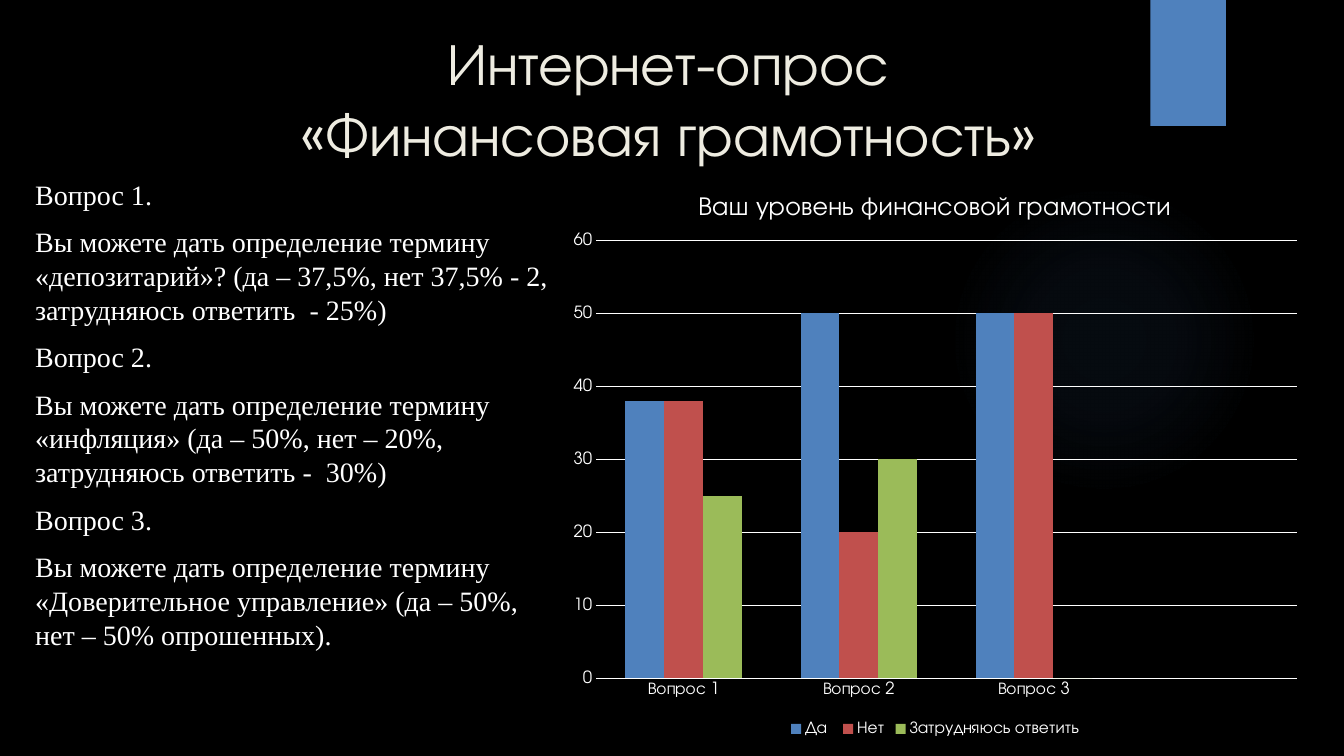
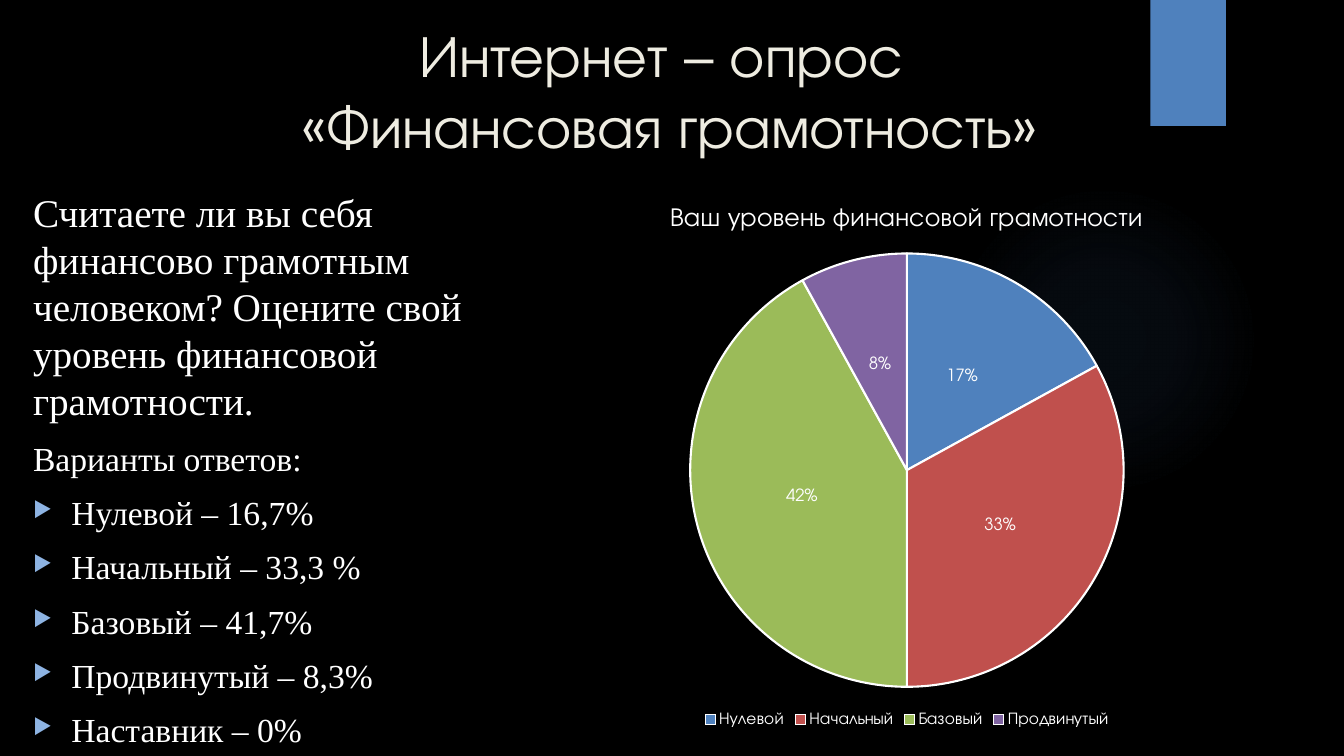
import pptx
import pptx.chart.data
import pptx.dml.color
import pptx.enum.chart
import pptx.enum.shapes
import pptx.enum.text
import pptx.oxml
import pptx.oxml.ns
import pptx.util
from lxml import etree

Inches = pptx.util.Inches
Pt = pptx.util.Pt
RGBColor = pptx.dml.color.RGBColor
qn = pptx.oxml.ns.qn

BLACK = RGBColor(0x00, 0x00, 0x00)
WHITE = RGBColor(0xFF, 0xFF, 0xFF)
CREAM = RGBColor(0xEE, 0xEC, 0xE1)
BLUE = RGBColor(0x4F, 0x81, 0xBD)
RED = RGBColor(0xC0, 0x50, 0x4D)
GREEN = RGBColor(0x9B, 0xBB, 0x59)
PURPLE = RGBColor(0x80, 0x64, 0xA2)
GLOW_BLUE = RGBColor(0x55, 0x8E, 0xD5)
BULLET_BLUE = RGBColor(0x8E, 0xB4, 0xE3)
PALETTE = (BLUE, RED, GREEN, PURPLE)

HEAD_FONT = "TeX Gyre Adventor"
BODY_FONT = "Times New Roman"
CHART_TITLE = "Ваш уровень финансовой грамотности"


def style_font(font, size, color=WHITE, name=HEAD_FONT):
    font.name = name
    font.size = Pt(size)
    font.bold = False
    font.color.rgb = color


def add_bullet(para):
    properties = para._p.get_or_add_pPr()
    properties.set("marL", str(Inches(0.38)))
    properties.set("indent", str(-Inches(0.38)))
    color = etree.SubElement(properties, qn("a:buClr"))
    etree.SubElement(color, qn("a:srgbClr"), val=str(BULLET_BLUE))
    etree.SubElement(properties, qn("a:buSzPct"), val="64000")
    etree.SubElement(properties, qn("a:buChar"), char="▶")


def add_text(page, area, texts, *, sizes, font=BODY_FONT, color=WHITE,
             align=pptx.enum.text.PP_ALIGN.LEFT,
             anchor=pptx.enum.text.MSO_ANCHOR.TOP, bullets_from=None):
    """Write one paragraph per text; paragraphs from bullets_from on get bullets."""
    frame = page.shapes.add_textbox(*map(Inches, area)).text_frame
    frame.word_wrap = True
    frame.vertical_anchor = anchor
    for index, (text, size) in enumerate(zip(texts, sizes)):
        para = frame.add_paragraph() if index else frame.paragraphs[0]
        para.text = text
        para.alignment = align
        if bullets_from is not None and index >= bullets_from:
            add_bullet(para)
        if index:
            para.space_before = Pt(10)
        for span in para.runs:
            style_font(span.font, size, color, font)


def add_title(page, area, text):
    add_text(page, area, [text], sizes=[42], font=HEAD_FONT, color=CREAM,
             align=pptx.enum.text.PP_ALIGN.CENTER,
             anchor=pptx.enum.text.MSO_ANCHOR.MIDDLE)


def add_plain_shape(page, kind, area):
    shape = page.shapes.add_shape(kind, *map(Inches, area))
    shape.shadow.inherit = False
    shape.line.fill.background()
    return shape


def add_glow(page):
    """Add a faint round light that fades out towards its edge."""
    glow = add_plain_shape(page, pptx.enum.shapes.MSO_SHAPE.OVAL, (9.41, 1.83, 3.08, 3.08))
    stops = "".join(
        f'<a:gs pos="{position * 1000}"><a:srgbClr val="{GLOW_BLUE}">'
        f'<a:alpha val="{alpha * 1000}"/></a:srgbClr></a:gs>'
        for position, alpha in ((0, 7), (36, 6), (69, 0), (100, 0)))
    gradient = pptx.oxml.parse_xml(
        f'<a:gradFill {pptx.oxml.ns.nsdecls("a")}><a:gsLst>{stops}</a:gsLst>'
        '<a:path path="circle"><a:fillToRect l="50000" t="50000" r="50000" b="50000"/>'
        '</a:path></a:gradFill>')
    glow._element.spPr.find(qn("a:prstGeom")).addnext(gradient)


def add_page(deck):
    page = deck.slides.add_slide(deck.slide_layouts[6])
    page.background.fill.solid()
    page.background.fill.fore_color.rgb = BLACK
    add_glow(page)
    band = add_plain_shape(page, pptx.enum.shapes.MSO_SHAPE.RECTANGLE, (11.41, 0, 0.75, 1.25))
    band.fill.solid()
    band.fill.fore_color.rgb = BLUE
    return page


def add_chart(page, kind, area, categories, series):
    data = pptx.chart.data.CategoryChartData()
    data.categories = categories
    for name, values in series:
        data.add_series(name, values)
    chart = page.shapes.add_chart(kind, *map(Inches, area), data).chart
    style_font(chart.font, 10)
    chart.has_title = True
    title = chart.chart_title.text_frame
    title.text = CHART_TITLE
    style_font(title.paragraphs[0].runs[0].font, 18.6)
    chart.has_legend = True
    chart.legend.position = pptx.enum.chart.XL_LEGEND_POSITION.BOTTOM
    chart.legend.include_in_layout = False
    style_font(chart.legend.font, 12)
    return chart


def place_plot(chart, **fractions):
    """Fix the inner plot area, given x, y, w and h as fractions of the chart."""
    plot_area = chart._chartSpace.chart.plotArea
    for old in plot_area.findall(qn("c:layout")):
        plot_area.remove(old)
    layout = etree.Element(qn("c:layout"))
    manual = etree.SubElement(layout, qn("c:manualLayout"))
    etree.SubElement(manual, qn("c:layoutTarget"), val="inner")
    for side in ("x", "y"):
        etree.SubElement(manual, qn(f"c:{side}Mode"), val="edge")
    for side, fraction in fractions.items():
        etree.SubElement(manual, qn(f"c:{side}"), val=str(fraction))
    plot_area.insert(0, layout)


def fill_solid(item, color):
    item.format.fill.solid()
    item.format.fill.fore_color.rgb = color


def add_column_chart(page, area, categories, series):
    chart = add_chart(page, pptx.enum.chart.XL_CHART_TYPE.COLUMN_CLUSTERED,
                      area, categories, series)
    place_plot(chart, x=0.05, y=0.12, w=0.93, h=0.77)
    plot = chart.plots[0]
    plot.gap_width = 150
    plot.overlap = 0
    plot.vary_by_categories = False
    for column, color in zip(plot.series, PALETTE):
        fill_solid(column, color)
        column.invert_if_negative = False
    for axis in (chart.category_axis, chart.value_axis):
        axis.major_tick_mark = pptx.enum.chart.XL_TICK_MARK.NONE
        axis.format.line.fill.background()
        style_font(axis.tick_labels.font, 12)
    scale = chart.value_axis
    scale.minimum_scale, scale.maximum_scale, scale.major_unit = 0, 60, 10
    grid = scale.major_gridlines.format.line
    grid.color.rgb = WHITE
    grid.width = Pt(0.75)


def add_pie_chart(page, area, categories, values):
    chart = add_chart(page, pptx.enum.chart.XL_CHART_TYPE.PIE,
                      area, categories, [(CHART_TITLE, values)])
    plot = chart.plots[0]
    plot.vary_by_categories = True
    pie = plot.series[0]
    for index, color in enumerate(PALETTE):
        point = pie.points[index]
        fill_solid(point, color)
        point.format.line.color.rgb = WHITE
        point.format.line.width = Pt(1.5)
    labels = pie.data_labels
    labels.show_percentage = True
    labels.show_value = False
    labels.number_format = "0%"
    labels.number_format_is_linked = False
    labels.position = pptx.enum.chart.XL_LABEL_POSITION.CENTER
    style_font(labels.font, 12)


def add_questions_page(deck):
    page = add_page(deck)
    add_title(page, (0.71, 0.22, 11.84, 1.49), "Интернет-опрос\v«Финансовая грамотность»")
    texts = [
        "Вопрос 1.",
        "Вы можете дать определение термину «депозитарий»? "
        "(да – 37,5%, нет 37,5% - 2, затрудняюсь ответить  - 25%)",
        "Вопрос 2.",
        "Вы можете дать определение термину «инфляция» "
        "(да – 50%, нет – 20%, затрудняюсь ответить -  30%)",
        "Вопрос 3.",
        "Вы можете дать определение термину «Доверительное управление» "
        "(да – 50%, нет – 50% опрошенных).",
    ]
    add_text(page, (0.25, 1.71, 5.33, 5.64), texts, sizes=[20] * len(texts))
    add_column_chart(
        page, (5.54, 1.71, 7.47, 5.64),
        ["Вопрос 1", "Вопрос 2", "Вопрос 3", ""],
        [("Да ", (38, 50, 50, None)),
         ("Нет", (38, 20, 50, None)),
         ("Затрудняюсь ответить", (25, 30, 0, None))])


def add_level_page(deck):
    page = add_page(deck)
    add_title(page, (0.71, 0.13, 11.86, 1.52), "Интернет – опрос \v«Финансовая грамотность»")
    texts = [
        "Считаете ли вы себя финансово грамотным человеком? "
        "Оцените свой уровень финансовой грамотности.",
        "Варианты ответов:",
        "Нулевой – 16,7%",
        "Начальный – 33,3 %",
        "Базовый – 41,7%",
        "Продвинутый – 8,3%",
        "Наставник – 0%",
    ]
    add_text(page, (0.23, 1.82, 5.38, 5.44), texts,
             sizes=[28] + [24] * (len(texts) - 1), bullets_from=2)
    add_pie_chart(page, (5.07, 1.82, 7.85, 5.44),
                  ["Нулевой", "Начальный", "Базовый", "Продвинутый"],
                  (17, 33, 42, 8))


def main():
    deck = pptx.Presentation()
    deck.slide_width = Inches(13.33)
    deck.slide_height = Inches(7.5)
    add_questions_page(deck)
    add_level_page(deck)
    deck.save("out.pptx")


if __name__ == "__main__":
    main()
